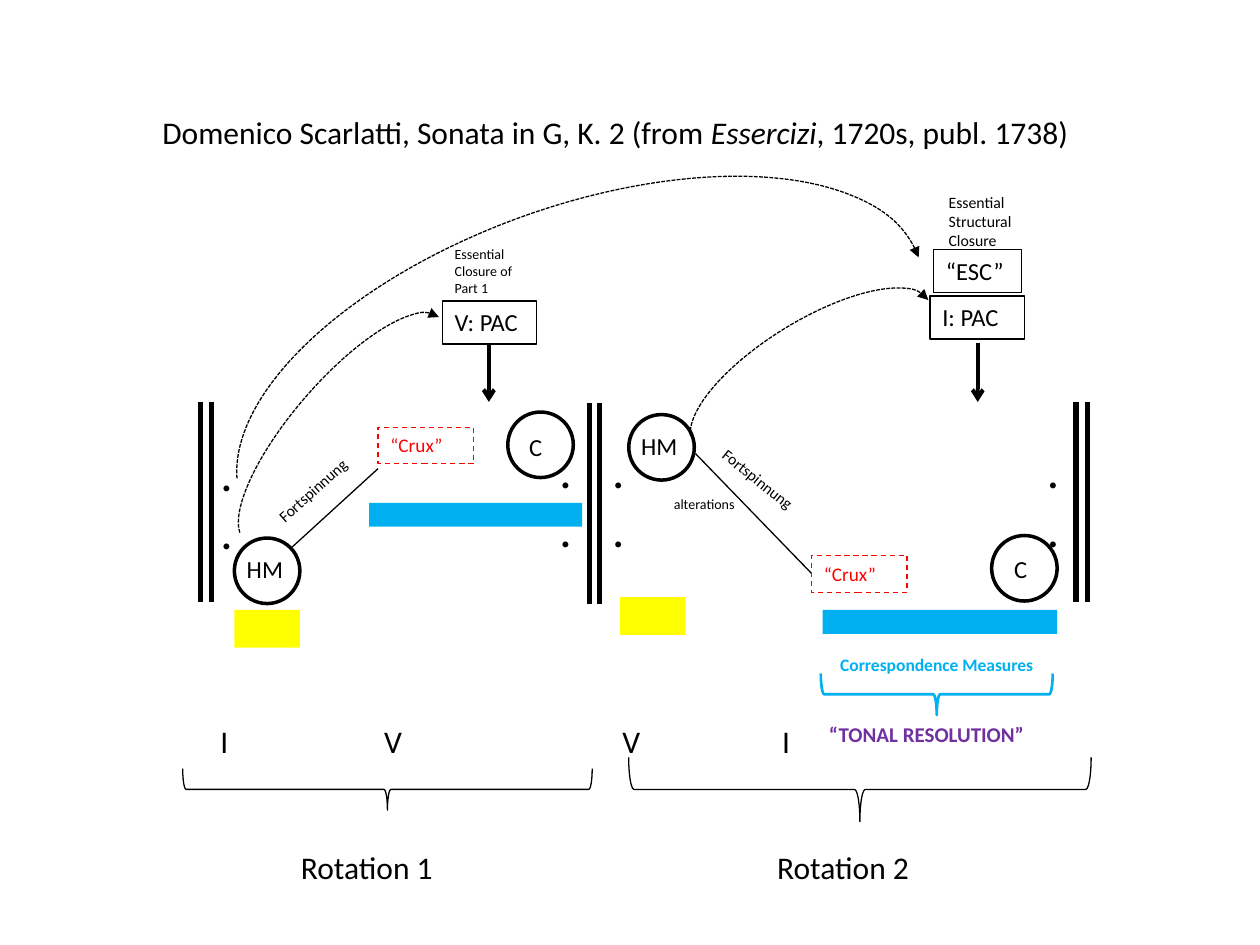
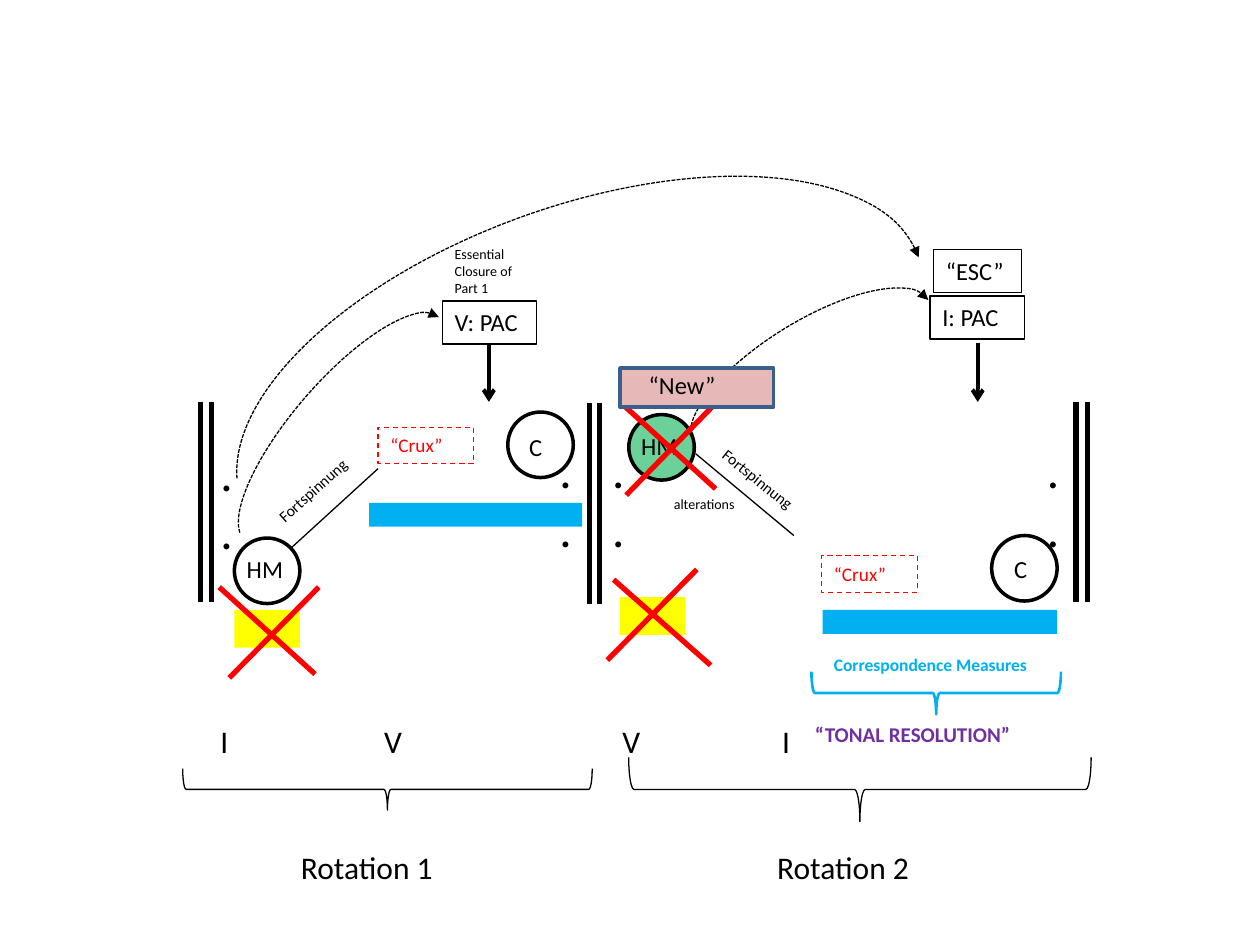
from lxml import etree
from pptx import Presentation, util as u
from pptx.dml.color import RGBColor
from pptx.enum import dml, shapes, text
from pptx.oxml.ns import qn

FONT = "Calibri"
BLACK, RED, YELLOW, BLUE, PURPLE = "000000", "FF0000", "FFFF00", "00B0F0", "7030A0"
GREEN, PINK, NAVY = "00B050", "E6B9B8", "3A5F8C"
PRESET = shapes.MSO_SHAPE
DASH = dml.MSO_LINE
CIRCLE = 0.52


def draw(slide, preset, at, words="", size=14, color=BLACK, bold=False, fill=None, alpha=None,
         line=None, width=0.75, dash=None, rotation=0, tabs=()):
    """Add a preset shape, or a text box if preset is None; *stars* mark italics."""
    box = [u.Inches(value) for value in at]
    shape = slide.shapes.add_shape(preset, *box) if preset else slide.shapes.add_textbox(*box)
    shape.shadow.inherit = False
    shape.rotation = rotation
    if fill:
        shape.fill.solid()
        shape.fill.fore_color.rgb = RGBColor.from_string(fill)
        if alpha:
            fill_color = next(shape._element.spPr.iter(qn("a:srgbClr")))
            etree.SubElement(fill_color, qn("a:alpha"), val=str(alpha * 1000))
    else:
        shape.fill.background()
    if line:
        shape.line.color.rgb = RGBColor.from_string(line)
        shape.line.width = u.Pt(width)
        if dash:
            shape.line.dash_style = dash
    else:
        shape.line.fill.background()
    if not words:
        return shape

    frame = shape.text_frame
    frame_format = {"word_wrap": True, "vertical_anchor": text.MSO_ANCHOR.TOP,
                    "auto_size": text.MSO_AUTO_SIZE.SHAPE_TO_FIT_TEXT}
    for name, value in frame_format.items():
        setattr(frame, name, value)
    for index, row in enumerate(words.split("\n")):
        paragraph = frame.add_paragraph() if index else frame.paragraphs[0]
        paragraph.alignment = text.PP_ALIGN.LEFT
        if tabs:
            tab_list = etree.SubElement(paragraph._p.get_or_add_pPr(), qn("a:tabLst"))
            for stop in tabs:
                etree.SubElement(tab_list, qn("a:tab"), pos=str(u.Inches(stop)), algn="l")
        for part, piece in enumerate(row.split("*")):
            run = paragraph.add_run()
            run.text = piece
            run.font.color.rgb = RGBColor.from_string(color)
            font_format = {"name": FONT, "size": u.Pt(size), "bold": bold, "italic": part % 2 == 1}
            for name, value in font_format.items():
                setattr(run.font, name, value)
    return shape


def draw_line(slide, start, end, color=BLACK, width=0.75, arrow=False):
    points = [u.Inches(value) for value in (*start, *end)]
    connector = slide.shapes.add_connector(shapes.MSO_CONNECTOR.STRAIGHT, *points)
    connector.line.color.rgb = RGBColor.from_string(color)
    connector.line.width = u.Pt(width)
    if arrow:
        etree.SubElement(connector.line._get_or_add_ln(), qn("a:tailEnd"), type="arrow")
    etree.SubElement(connector._element.spPr, qn("a:effectLst"))


# What differs between the plain scheme and the altered one
schemes = [
    {"altered": False, "theme_fill": None, "fortspinnung_end": (6.44, 4.55), "crux": 6.44,
     "measures": 6.57, "tonal_brace": (7.27, 4.59, 0.33, 1.84), "tonal": 6.48},
    {"altered": True, "theme_fill": GREEN, "fortspinnung_end": (6.3, 4.25), "crux": 6.52,
     "measures": 6.52, "tonal_brace": (7.26, 4.51, 0.34, 1.98), "tonal": 6.37},
]
bar_lines = [(1.59, 3.19), (1.68, 3.19), (4.68, 3.2), (4.76, 3.2), (8.54, 3.19), (8.63, 3.19)]
repeat_dots = [(1.65, 3.46), (4.34, 3.44), (4.76, 3.44), (8.21, 3.44)]
arcs = [((1.54, 3.02, 2.35, 0.77), 310.9), ((5.34, 2.55, 2.19, 0.81), 328.4),
        ((1.75, 1.64, 5.71, 2.74), 340.2)]
color_bars = [((1.86, 4.84, CIRCLE, 0.3), YELLOW), ((4.92, 4.74, CIRCLE, 0.3), YELLOW),
              ((2.93, 3.99, 1.69, 0.19), BLUE), ((6.53, 4.84, 1.86, 0.19), BLUE)]
cadences = [((3.51, 2.39, 0.75, 0.34), "V: PAC"), ((7.38, 2.35, 0.75, 0.34), "I: PAC"),
            ((7.41, 1.98, 0.7, 0.34), "“ESC”")]
crosses = [((5.68, 3.2), (4.97, 3.93)), ((4.92, 3.19), (5.68, 3.88)),
           ((4.87, 4.6), (5.64, 5.28)), ((5.53, 4.52), (4.82, 5.24)),
           ((2.53, 4.66), (1.82, 5.38)), ((1.74, 4.66), (2.5, 5.35))]

presentation = Presentation()
presentation.slide_width = u.Inches(10)
presentation.slide_height = u.Inches(7.5)

for scheme in schemes:
    slide = presentation.slides.add_slide(presentation.slide_layouts[6])

    # Double bars with repeat dots
    for left, top in bar_lines:
        draw_line(slide, (left, top), (left, top + 1.59), width=3)
    for left, top in repeat_dots:
        draw(slide, None, (left, top, 0.42, 1.04), ".\n.", size=28)

    # Themes: circle, then its label
    themes = [((1.86, 4.27), "HM", (1.86, 4.35), None), ((4.03, 3.27), "C", (4.1, 3.38), None),
              ((4.99, 3.29), "HM", (4.99, 3.37), scheme["theme_fill"]),
              ((7.87, 4.25), "C", (7.95, 4.35), None)]
    for circle, label, label_at, fill in themes:
        draw(slide, PRESET.OVAL, (*circle, CIRCLE, CIRCLE), fill=fill, alpha=58,
             line=BLACK, width=2)
        draw(slide, None, (*label_at, CIRCLE, 0.34), label)

    # Fortspinnung leading to each crux
    draw_line(slide, (2.31, 4.35), (3, 3.72))
    draw_line(slide, (5.52, 3.6), scheme["fortspinnung_end"])
    draw(slide, None, (2.04, 3.75, 0.92, 0.25), "Fortspinnung", size=9, rotation=318.3)
    draw(slide, None, (5.57, 3.71, 0.97, 0.25), "Fortspinnung", size=9, rotation=38.8)
    draw(slide, None, (5.25, 3.88, 0.87, 0.24), "alterations", size=8)
    for left, top in [(3, 3.39), (scheme["crux"], 4.41)]:
        draw(slide, PRESET.RECTANGLE, (left, top, 0.76, 0.29), "“Crux”", size=11, color=RED,
             line=RED, dash=DASH.DASH)

    # Keys and rotations
    draw(slide, None, (1.65, 5.68, 7.19, 0.4), "I\tV\tV\tI", size=18, tabs=(1.3, 3.19, 4.46))
    for at in [(2.91, 4.64, 0.33, 3.25), (6.57, 4.43, 0.51, 3.67)]:
        draw(slide, PRESET.LEFT_BRACE, at, line=BLACK, rotation=270)
    draw(slide, None, (1.46, 6.68, 7.38, 0.4), "\tRotation 1\tRotation 2", size=18,
         tabs=(0.83, 4.61))

    # Arcs from the opening themes to the cadences
    for at, rotation in arcs:
        arc = draw(slide, PRESET.ARC, at, line=BLACK, dash=DASH.SQUARE_DOT, rotation=rotation)
        arc.adjustments[0] = 110.21
        arc.adjustments[1] = 0
        etree.SubElement(arc.line._get_or_add_ln(), qn("a:tailEnd"), type="triangle")

    for at, fill in color_bars:
        draw(slide, PRESET.RECTANGLE, at, fill=fill)

    # Tonal resolution
    draw(slide, PRESET.LEFT_BRACE, scheme["tonal_brace"], line=BLUE, width=1.5, rotation=270)
    draw(slide, None, (scheme["tonal"], 5.68, 1.94, 0.3), "“TONAL RESOLUTION”", size=12,
         color=PURPLE, bold=True)
    draw(slide, None, (scheme["measures"], 5.14, 1.91, 0.27), "Correspondence Measures", size=10,
         color=BLUE, bold=True)

    # Cadences
    draw(slide, None, (3.51, 1.9, 0.74, 0.5), "Essential Closure of Part 1", size=8)
    for at, label in cadences:
        draw(slide, PRESET.RECTANGLE, at, label, line=BLACK)
    for left in (3.88, 7.76):
        draw_line(slide, (left, 2.72), (left, 3.19), width=2.25, arrow=True)

    if scheme["altered"]:
        for start, end in crosses:
            draw_line(slide, start, end, color=RED, width=3)
        draw(slide, PRESET.RECTANGLE, (4.92, 2.92, 1.22, 0.31), fill=PINK, line=NAVY, width=2)
        draw(slide, None, (5.05, 2.89, 0.78, 0.34), "“New”")
    else:
        draw(slide, None, (1.19, 0.85, 7.61, 0.4),
             "Domenico Scarlatti, Sonata in G, K. 2 (from *Essercizi*, 1720s, publ. 1738)", size=18)
        draw(slide, None, (7.43, 1.48, 0.79, 0.56), "Essential Structural Closure", size=9)

presentation.save("out.pptx")
